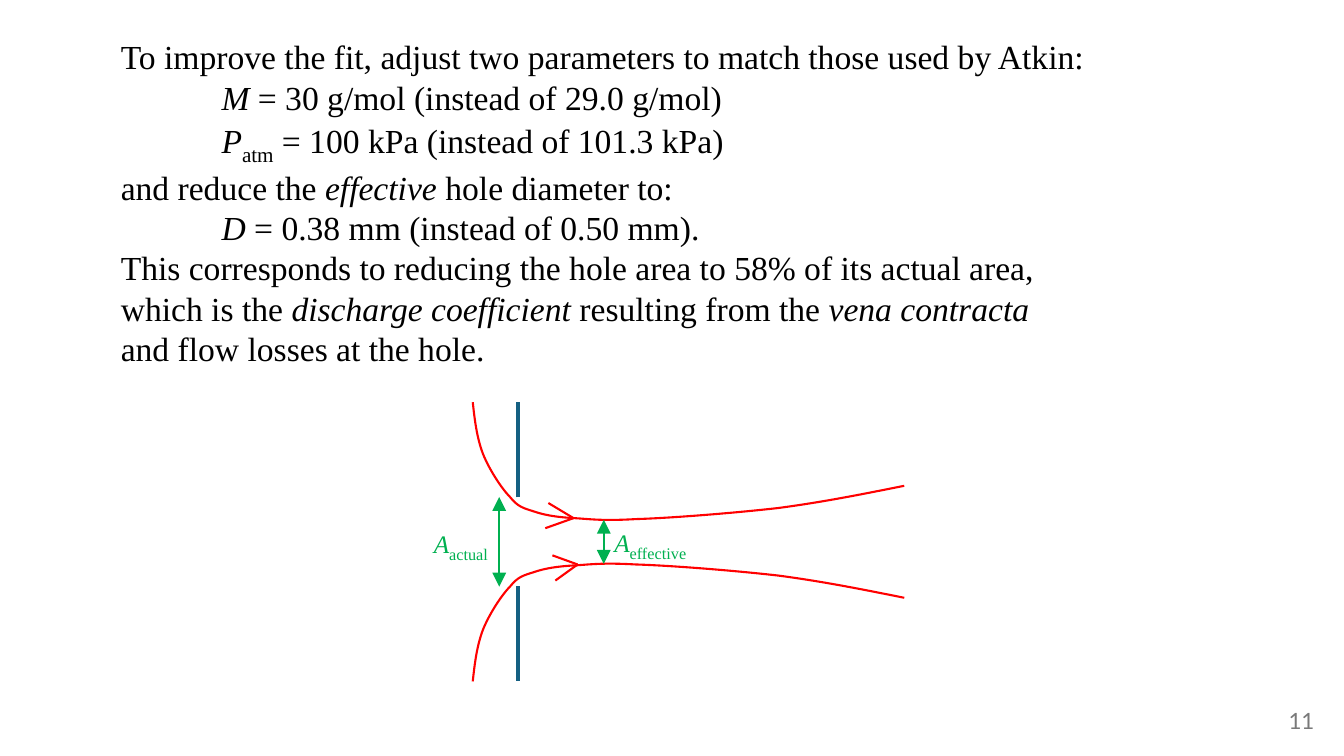
from lxml import etree
from pptx import Presentation
from pptx.dml.color import RGBColor
from pptx.enum.shapes import MSO_CONNECTOR
from pptx.enum.text import MSO_ANCHOR, PP_ALIGN
from pptx.oxml.ns import qn
from pptx.util import Pt

STRAIGHT = MSO_CONNECTOR.STRAIGHT
MIDDLE = MSO_ANCHOR.MIDDLE
TOP = MSO_ANCHOR.TOP
LEFT = PP_ALIGN.LEFT
RIGHT = PP_ALIGN.RIGHT

BLACK = RGBColor(0x00, 0x00, 0x00)
GREY = RGBColor(0x79, 0x79, 0x79)
WALL_BLUE = RGBColor(0x15, 0x60, 0x82)
FLOW_RED = RGBColor(0xFF, 0x00, 0x00)
AREA_GREEN = RGBColor(0x00, 0xB0, 0x50)

SERIF = "Times New Roman"
PLAIN, ITALIC, SUBSCRIPT = "plain", "italic", "subscript"
LINE_PITCH = 28.8
SUBSCRIPT_PITCH = 35.6
LABEL_PITCH = 27.5

EXPLANATION = [
    (0, LINE_PITCH, [("To improve the fit, adjust two parameters to match those used by Atkin:", PLAIN)]),
    (72, LINE_PITCH, [("M", ITALIC), (" = 30 g/mol (instead of 29.0 g/mol)", PLAIN)]),
    (72, SUBSCRIPT_PITCH, [("P", ITALIC), ("atm", SUBSCRIPT),
                           (" = 100 kPa (instead of 101.3 kPa)", PLAIN)]),
    (0, LINE_PITCH, [("and reduce the ", PLAIN), ("effective", ITALIC), (" hole diameter to:", PLAIN)]),
    (72, LINE_PITCH, [("D", ITALIC), (" = 0.38 mm (instead of 0.50 mm).", PLAIN)]),
    (0, LINE_PITCH, [("This corresponds to reducing the hole area to 58% of its actual area,", PLAIN)]),
    (0, LINE_PITCH, [("which is the ", PLAIN), ("discharge coefficient", ITALIC),
                     (" resulting from the ", PLAIN), ("vena contracta", ITALIC)]),
    (0, LINE_PITCH, [("and flow losses at the hole.", PLAIN)]),
]

STREAMLINE = [
    (0, 99.7),
    (1.4, 86.8), (2.9, 74.5), (7.2, 63),
    (11.5, 52.2), (20.2, 38.5), (26.6, 32),
    (32.4, 24.8), (36, 24.1), (43.9, 21.6),
    (51.1, 19.1), (59.8, 17.6), (72, 16.9),
    (84.2, 16.2), (92.2, 14.8), (116.6, 16.2),
    (141.1, 16.9), (186.5, 20.5), (218.2, 24.1),
    (250.6, 28.4), (279.4, 34.2), (308.2, 40),
]

WALL_X = 32.4
HOLE_HALF_HEIGHT = 31.7
AREA_ARROWS = [(18.9, 32), (93.6, 15.8)]
AREA_LABELS = [(-34.9, 15.5, 59.8, "actual"), (94, 16.2, 72.7, "effective")]
FLOW_HEADS = [
    ((72, 16.9), [(54, 27.7), (51.8, 9.7)]),
    ((74.9, -16.2), [(56.9, -9.7), (59, -27.7)]),
]


def add_text(slide, box, lines, size, color, font=SERIF, wrap=True, anchor=TOP, align=LEFT):
    shape = slide.shapes.add_textbox(*(Pt(value) for value in box))
    frame = shape.text_frame
    frame.word_wrap = wrap
    frame.vertical_anchor = anchor
    base = {"name": font, "size": Pt(size)}
    formats = {
        PLAIN: base,
        ITALIC: {**base, "italic": True},
        SUBSCRIPT: {**base, "size": Pt(size + 2)},
    }
    for index, (indent, pitch, runs) in enumerate(lines):
        paragraph = frame.add_paragraph() if index else frame.paragraphs[0]
        paragraph.alignment = align
        if pitch:
            paragraph.line_spacing = Pt(pitch)
        if indent:
            properties = paragraph._p.get_or_add_pPr()
            properties.set("marL", str(Pt(indent)))
            properties.set("indent", "0")
        for text, style in runs:
            run = paragraph.add_run()
            run.text = text
            for name, value in formats[style].items():
                setattr(run.font, name, value)
            run.font.color.rgb = color
            if style == SUBSCRIPT:
                run._r.get_or_add_rPr().set("baseline", "-25000")


def add_line(slide, start, end, color, width, arrows=False):
    connector = slide.shapes.add_connector(STRAIGHT, *(Pt(value) for value in (*start, *end)))
    connector.line.color.rgb = color
    connector.line.width = Pt(width)
    if arrows:
        line = connector.line._get_or_add_ln()
        for tag in ("a:headEnd", "a:tailEnd"):
            etree.SubElement(line, qn(tag), type="triangle", w="lg", len="lg")
    etree.SubElement(connector._element.spPr, qn("a:effectLst"))


def add_streamline(slide, points):
    start, *controls = [(Pt(x), Pt(y)) for x, y in points]
    builder = slide.shapes.build_freeform(*start, scale=1.0)
    builder.add_line_segments(controls, close=False)
    shape = builder.convert_to_shape()
    segments = list(shape._element.iter(qn("a:lnTo")))
    outline = segments[0].getparent()
    for first in range(0, len(segments), 3):
        curve = etree.SubElement(outline, qn("a:cubicBezTo"))
        for segment in segments[first:first + 3]:
            curve.append(segment[0])
            outline.remove(segment)
    shape.shadow.inherit = False
    shape.fill.background()
    shape.line.color.rgb = FLOW_RED
    shape.line.width = Pt(1.5)


def add_flow_diagram(slide, box):
    left, top, width, height = box
    axis = top + height / 2

    def place(x, rise):
        return left + x, axis - rise

    for side in (1, -1):
        add_line(slide, place(WALL_X, side * HOLE_HALF_HEIGHT),
                 place(WALL_X, side * height / 2), WALL_BLUE, 3)
    for side in (1, -1):
        add_streamline(slide, [place(x, side * rise) for x, rise in STREAMLINE])
    for x, rise in AREA_ARROWS:
        add_line(slide, place(x, rise), place(x, -rise), AREA_GREEN, 1.75, arrows=True)
    for x, rise, label_width, name in AREA_LABELS:
        label = [(0, LABEL_PITCH, [("A", ITALIC), (name, SUBSCRIPT)])]
        add_text(slide, (*place(x, rise), label_width, 28.8), label, 18, AREA_GREEN, wrap=False)
    for tip, barbs in FLOW_HEADS:
        for barb in barbs:
            add_line(slide, place(*barb), place(*tip), FLOW_RED, 1.5)


def add_slide_number(slide, box):
    add_text(slide, box, [(0, None, [("11", PLAIN)])], 16, GREY,
             font="Lato", anchor=MIDDLE, align=RIGHT)


def main():
    presentation = Presentation()
    presentation.slide_width = Pt(960)
    presentation.slide_height = Pt(540)
    slide = presentation.slides.add_slide(presentation.slide_layouts[6])
    add_slide_number(slide, (730, 500.4, 216, 28.8))
    add_text(slide, (79.2, 22.3, 708.5, 239.8), EXPLANATION, 24, BLACK)
    add_flow_diagram(slide, (337.7, 287.3, 308.2, 199.4))
    presentation.save("out.pptx")


if __name__ == "__main__":
    main()
